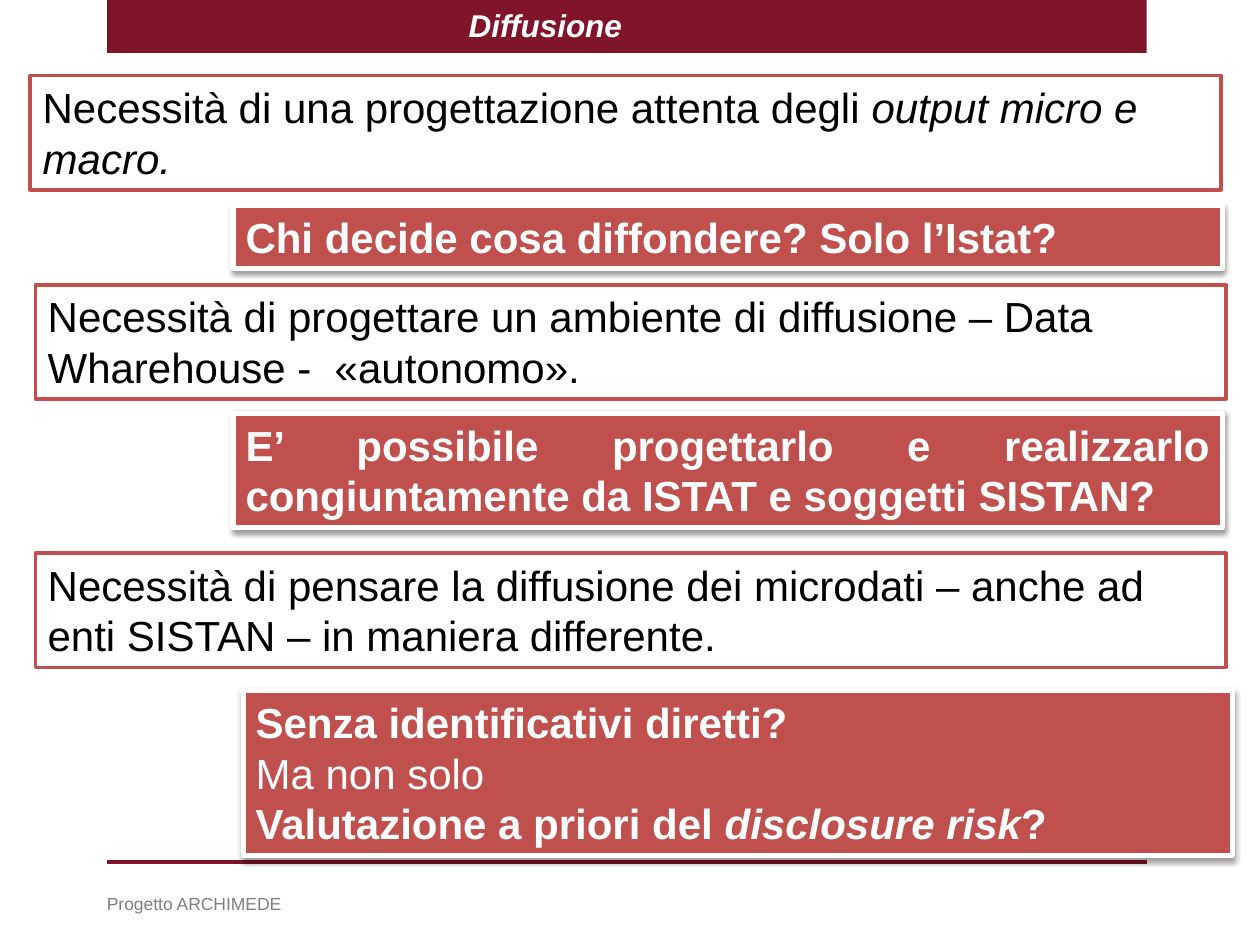
"""Builds the "Diffusione" slide: three needs, each followed by its open question."""
from dataclasses import dataclass

from lxml import etree
from pptx import Presentation
from pptx import util as u
from pptx.dml.color import RGBColor
from pptx.enum import shapes, text
from pptx.oxml import ns


@dataclass(frozen=True)
class Theme:
    font: str = "Arial"
    maroon: str = "7F142A"
    red: str = "C0504D"
    white: str = "FFFFFF"
    black: str = "000000"
    grey: str = "7F7F7F"
    title: int = 18
    body: int = 24
    footer: int = 10


THEME = Theme()
WIDTH, HEIGHT = u.Inches(10), u.Inches(7.5)

TITLE = [[("Diffusione", "bi")]]
FOOTER = [[("Progetto ARCHIMEDE", "")]]
TITLE_AREA = (36.2, 0, 14.3, 5.33)
FOOTER_AREA = (7.5, 93.87, 51.3, 3.6)
BAND_AREA = (8.5, 0, 82.5, 5.6)
RULE_TOP = 91.2
BOX_PADDING, LINE_HEIGHT = 1.33, 5.39

NEEDS = [
    (2.4, 8, 2, [[("Necessità di una progettazione attenta degli ", ""),
                  ("output micro e macro.", "i")]]),
    (2.8, 30.13, 2, [[("Necessità di progettare un ambiente di diffusione – Data "
                       "Wharehouse -  «autonomo».", "")]]),
    (2.8, 58.53, 2, [[("Necessità di pensare la diffusione dei microdati – anche ad "
                       "enti SISTAN – in maniera differente.", "")]]),
]
QUESTIONS = [
    (18.5, 21.73, 1, [[("Chi decide cosa diffondere? Solo l’Istat?", "b")]]),
    (18.5, 43.73, 2, [[("E’ possibile progettarlo e realizzarlo congiuntamente da "
                        "ISTAT e soggetti SISTAN?", "b")]]),
    (19.3, 73.07, 3, [[("Senza identificativi diretti?", "b")],
                      [("Ma non solo", "")],
                      [("Valutazione a priori del ", "b"),
                       ("disclosure risk", "bi"), ("?", "b")]]),
]
NEED_WIDTH, QUESTION_WIDTH = 94.5, 78.5
JUSTIFIED = QUESTIONS[1]


def area(left, top, width, height):
    return [int(share * side / 100) for share, side in
            zip((left, top, width, height), (WIDTH, HEIGHT) * 2)]


def write(holder, paragraphs, size, color, align=text.PP_ALIGN.LEFT, wrap=True):
    frame = holder.text_frame
    frame.word_wrap = wrap
    frame.auto_size = text.MSO_AUTO_SIZE.SHAPE_TO_FIT_TEXT
    frame.vertical_anchor = text.MSO_ANCHOR.TOP
    frame.text = "\n".join("" for _ in paragraphs)
    for paragraph, parts in zip(frame.paragraphs, paragraphs):
        paragraph.alignment = align
        for words, style in parts:
            run = paragraph.add_run()
            run.text = words
            run.font.name, run.font.size = THEME.font, u.Pt(size)
            run.font.bold, run.font.italic = "b" in style, "i" in style
            run.font.color.rgb = RGBColor.from_string(color)


def add_panel(slide, place, fill, outline=None, weight=0):
    panel = slide.shapes.add_shape(shapes.MSO_SHAPE.RECTANGLE, *area(*place))
    panel.shadow.inherit = False
    panel.fill.solid()
    panel.fill.fore_color.rgb = RGBColor.from_string(fill)
    if outline:
        panel.line.color.rgb = RGBColor.from_string(outline)
        panel.line.width = u.Pt(weight)
    else:
        panel.line.fill.background()
    return panel


def cast_shadow(panel):
    effects = panel._element.spPr.find(ns.qn("a:effectLst"))
    shadow = etree.SubElement(effects, ns.qn("a:outerShdw"), blurRad=str(u.Pt(3.1)),
                              dist=str(u.Pt(1.6)), dir="5400000", rotWithShape="0")
    tint = etree.SubElement(shadow, ns.qn("a:srgbClr"), val=THEME.black)
    etree.SubElement(tint, ns.qn("a:alpha"), val="38000")


def add_frame(slide):
    add_panel(slide, BAND_AREA, THEME.maroon)
    left, top, width, _ = area(BAND_AREA[0], RULE_TOP, BAND_AREA[2], 0)
    rule = slide.shapes.add_connector(shapes.MSO_CONNECTOR.STRAIGHT,
                                      left, top, left + width, top)
    rule.line.color.rgb = RGBColor.from_string(THEME.maroon)
    rule.line.width = u.Pt(2)
    etree.SubElement(rule._element.spPr, ns.qn("a:effectLst"))

    title = slide.shapes.title
    title.left, title.top, title.width, title.height = area(*TITLE_AREA)
    write(title, TITLE, THEME.title, THEME.white, wrap=False)
    slide.shapes._spTree.append(title._element)
    footer = slide.shapes.add_textbox(*area(*FOOTER_AREA))
    write(footer, FOOTER, THEME.footer, THEME.grey)


def main():
    deck = Presentation()
    deck.slide_width, deck.slide_height = WIDTH, HEIGHT
    slide = deck.slides.add_slide(deck.slide_layouts.get_by_name("Title Only"))
    add_frame(slide)
    for left, top, lines, words in NEEDS:
        place = (left, top, NEED_WIDTH, BOX_PADDING + LINE_HEIGHT * lines)
        need = add_panel(slide, place, THEME.white, THEME.red, 2)
        write(need, words, THEME.body, THEME.black)
    for question in QUESTIONS:
        left, top, lines, words = question
        place = (left, top, QUESTION_WIDTH, BOX_PADDING + LINE_HEIGHT * lines)
        callout = add_panel(slide, place, THEME.red, THEME.white, 3)
        cast_shadow(callout)
        align = text.PP_ALIGN.JUSTIFY if question is JUSTIFIED else text.PP_ALIGN.LEFT
        write(callout, words, THEME.body, THEME.white, align)
    deck.save("out.pptx")


if __name__ == "__main__":
    main()
